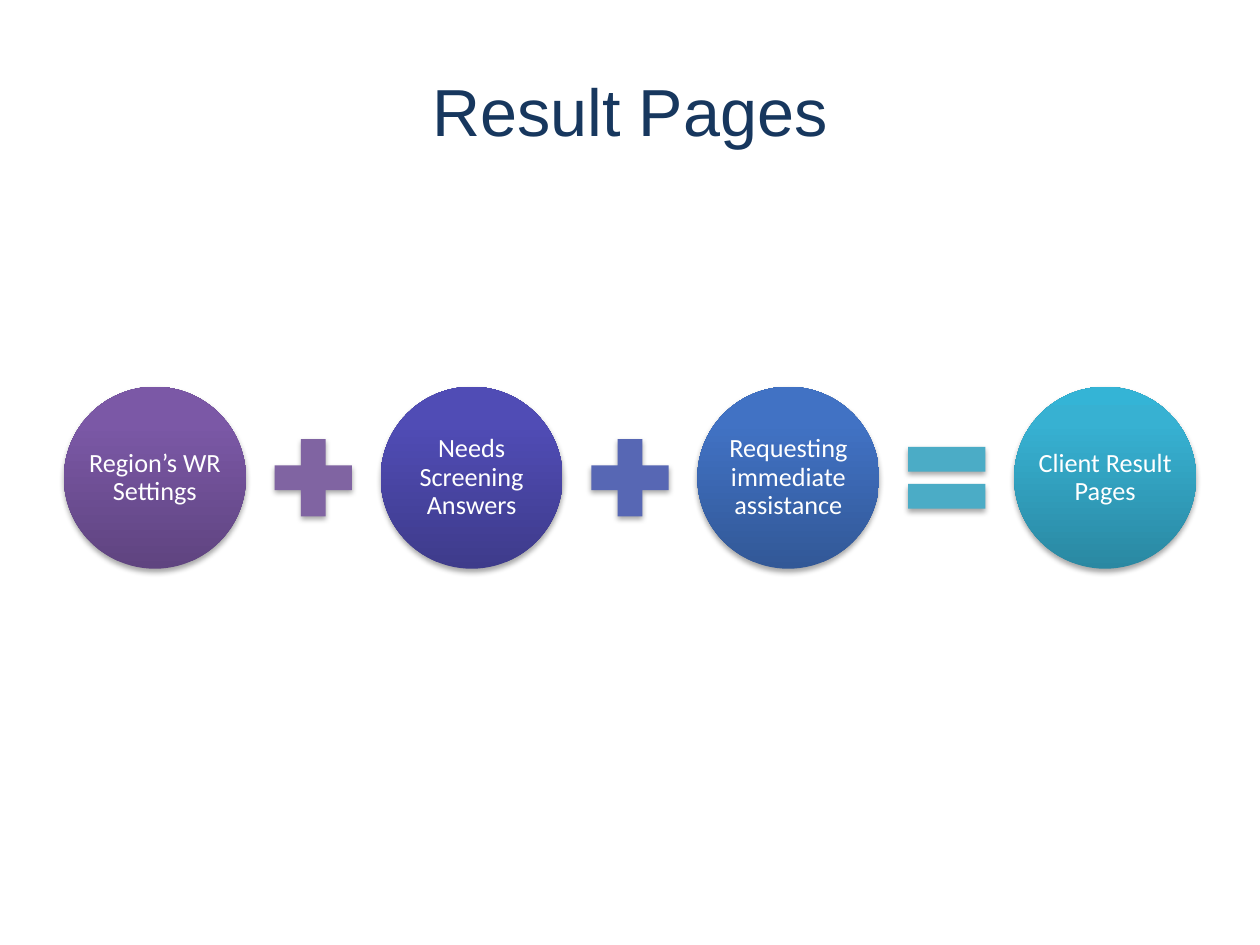
from copy import deepcopy

from lxml.etree import SubElement
from pptx import Presentation
from pptx.dml.color import RGBColor
from pptx.enum.shapes import MSO_SHAPE as Shape
from pptx.enum.text import MSO_ANCHOR as Anchor, PP_ALIGN as Align
from pptx.oxml.ns import qn
from pptx.util import Pt

CIRCLE, SYMBOL, PITCH = 104, 60, 181
LEFT, MIDDLE = 36.5, 273
STEPS = [
    ("Region’s WR Settings", ("5F4480", "7B58A6", "7C57A8")),
    ("Needs Screening Answers", ("3E3B8B", "504CB5", "4F4BB8")),
    ("Requesting immediate assistance", ("325897", "4172C4", "3F72C7")),
    ("Client Result Pages", ("2A88A2", "37B1D2", "34B4D6")),
]
OPERATORS = [
    (Shape.MATH_PLUS, "8064A2"),
    (Shape.MATH_PLUS, "5767B4"),
    (Shape.MATH_EQUAL, "4BACC6"),
]


def rgb(value):
    """Turn a hex string into a colour."""
    return RGBColor.from_string(value)


def write(frame, text, font="Calibri", size=15, color="FFFFFF", inset=4, spacing=1.0):
    """Put centred, formatted text into a frame."""
    frame.word_wrap = True
    frame.vertical_anchor = Anchor.MIDDLE
    frame.margin_left = frame.margin_right = Pt(inset)
    frame.margin_top = frame.margin_bottom = Pt(inset)
    frame.text = text
    paragraph = frame.paragraphs[0]
    paragraph.alignment = Align.CENTER
    paragraph.line_spacing = spacing
    paragraph.font.name = font
    paragraph.font.size = Pt(size)
    paragraph.font.color.rgb = rgb(color)


class EquationSlide:
    """Hold the slide and its equation group, and draw their elements."""

    def __init__(self, deck):
        """Add a title-only slide with an empty group."""
        self.slide = deck.slides.add_slide(deck.slide_layouts[5])
        self.equation = self.slide.shapes.add_group_shape().shapes

    def title(self, text):
        """Place and format the title."""
        heading = self.slide.shapes.title
        heading.left, heading.top = Pt(36), Pt(30)
        heading.width, heading.height = Pt(648), Pt(66)
        write(heading.text_frame, text, font="Arial", size=38, color="17375E")

    def shadowed(self, kind, left, size):
        """Add a borderless shape with a soft shadow on the middle line."""
        shape = self.equation.add_shape(
            kind, Pt(left), Pt(MIDDLE - size / 2), Pt(size), Pt(size))
        shape.line.fill.background()
        shape.shadow.inherit = False
        effects = shape._element.spPr.find(qn("a:effectLst"))
        shadow = SubElement(
            effects, qn("a:outerShdw"), blurRad=str(Pt(3.15)), dist=str(Pt(1.8)),
            dir="5400000", rotWithShape="0")
        black = SubElement(shadow, qn("a:srgbClr"), val="000000")
        SubElement(black, qn("a:alpha"), val="35000")
        return shape

    def step(self, left, text, colors):
        """Add a gradient circle with its label."""
        circle = self.shadowed(Shape.OVAL, left, CIRCLE)
        circle.fill.gradient()
        circle.fill.gradient_angle = 90
        stop_list = circle._element.spPr.find(".//" + qn("a:gsLst"))
        stop_list.append(deepcopy(stop_list[0]))
        for stop, position, color in zip(circle.fill.gradient_stops, (0, 0.8, 1), colors):
            stop.position = position
            stop.color.rgb = rgb(color)
        label = self.equation.add_textbox(circle.left, circle.top, circle.width, circle.height)
        write(label.text_frame, text, spacing=0.9)

    def operator(self, left, kind, color):
        """Add a plus or equals sign."""
        sign = self.shadowed(kind, left, SYMBOL)
        sign.fill.solid()
        sign.fill.fore_color.rgb = rgb(color)


def main():
    """Build and save the slide."""
    deck = Presentation()
    deck.slide_width, deck.slide_height = Pt(720), Pt(540)
    page = EquationSlide(deck)
    page.title("Result Pages")
    sign_offset = (CIRCLE + PITCH - SYMBOL) / 2
    for index, (text, colors) in enumerate(STEPS):
        left = LEFT + index * PITCH
        page.step(left, text, colors)
        if index < len(OPERATORS):
            page.operator(left + sign_offset, *OPERATORS[index])
    deck.save("out.pptx")


if __name__ == "__main__":
    main()
